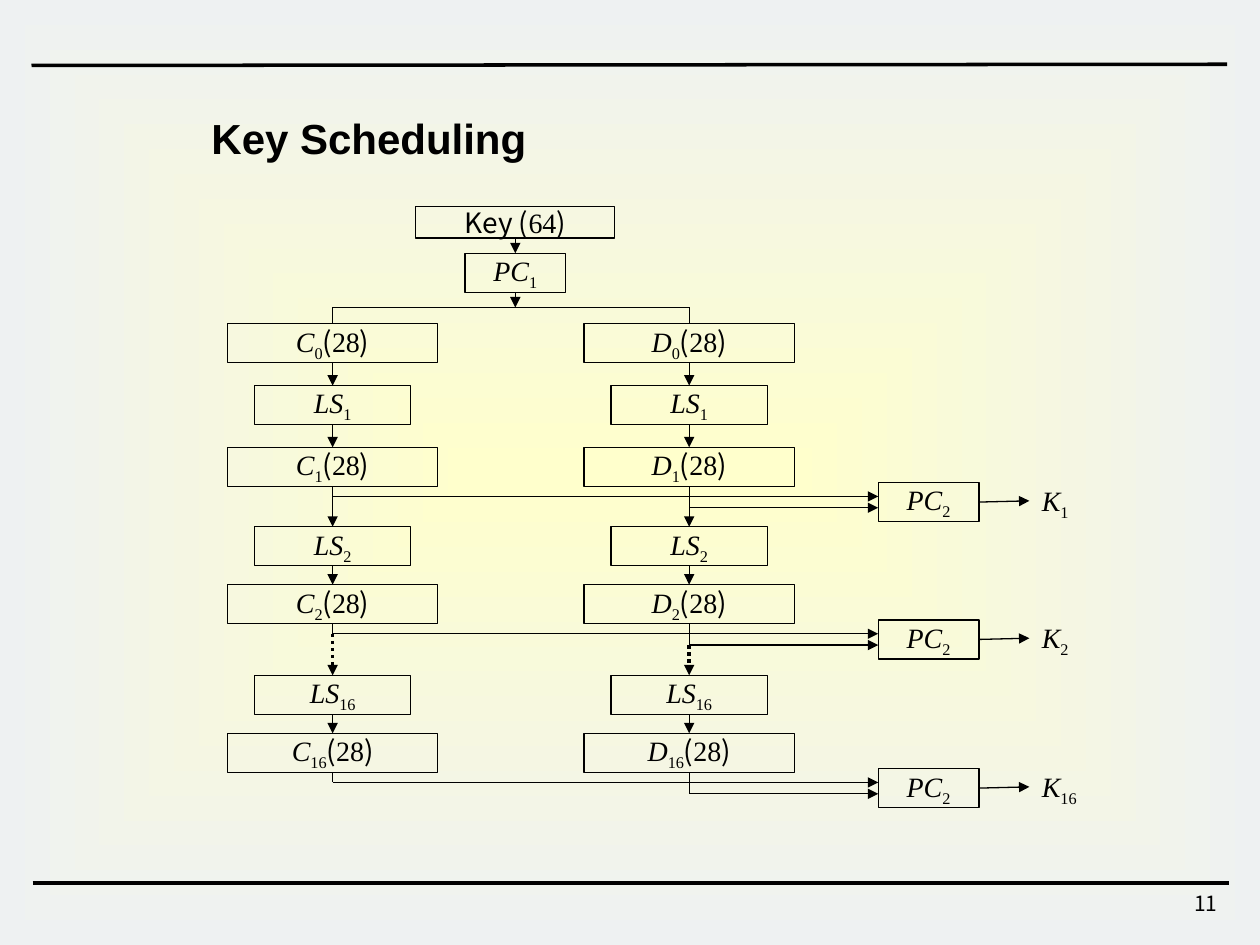
from lxml.etree import SubElement
from pptx import Presentation
from pptx.dml.color import RGBColor
from pptx.enum.dml import MSO_LINE_DASH_STYLE as Dash
from pptx.enum.shapes import MSO_CONNECTOR as Connector, MSO_SHAPE as Shape
from pptx.enum.text import MSO_ANCHOR as Anchor, PP_ALIGN as Align
from pptx.oxml import parse_xml
from pptx.oxml.ns import nsdecls, qn
from pptx.util import Inches, Pt

THEME = {
    "ink": "000000", "glow": "FFFFCC", "edge": "EEF1F2",
    "title_font": "Arial", "math_font": "Times New Roman", "plain_font": "Noto Sans CJK KR",
    "title_size": 24, "label_size": 16, "number_size": 12,
    "thin": 0.75, "thick": 2,
}

# Content
TITLE = "Key Scheduling"
PAGE_NUMBER = "11"
KEY_LABEL = [("Key (", "plain"), ("64", "math"), (")", "plain")]
BITS = [("(", "plain"), ("28", "math"), (")", "plain")]
HALVES = {"C": 2.64, "D": 5.47}  # name: column centre
START_ROW = 2.57
# subscript, top of shift row, top of half-key row
ROUNDS = [("1", 3.06, 3.55), ("2", 4.18, 4.64), ("16", 5.36, 5.82)]

# Grid, in inches
WIDTH, HEIGHT = 10, 7.5
BOX_HEIGHT = 0.31
HALF_WIDTH, SHIFT_WIDTH, CHOICE_WIDTH, KEY_WIDTH = 1.67, 1.24, 0.8, 1.58
KEY_CENTER, CHOICE_CENTER, OUTPUT_LEFT = 4.09, 7.37, 8.17
KEY_TOP, KEY_HEIGHT, FIRST_CHOICE_TOP, SPLIT_ROW = 1.64, 0.25, 2.01, 2.44
TAP_GAPS = {"C": 0.08, "D": 0.17}  # drop below a half key to its branch
CHOICE_DROP, OUTPUT_RISE = 0.28, 0.04
TOP, LEFT, BOTTOM, RIGHT = range(4)

deck = Presentation()
deck.slide_width, deck.slide_height = Inches(WIDTH), Inches(HEIGHT)
page = deck.slides.add_slide(deck.slide_layouts[6])
INK = RGBColor.from_string(THEME["ink"])


def symbol(name, subscript):
    return [(name, "variable"), (subscript, "subscript")]


def write(frame, runs, size, font, align=Align.LEFT, bold=False):
    """Fill one paragraph with (text, style) runs."""
    para = frame.paragraphs[0]
    para.alignment = align
    para.font.size, para.font.name = Pt(size), font
    para.font.bold, para.font.color.rgb = bold, INK
    for text, style in runs:
        span = para.add_run()
        span.text = text
        if style == "plain":
            span.font.name = THEME["plain_font"]
        elif style == "variable":
            span.font.italic = True
        elif style == "subscript":
            span._r.get_or_add_rPr().set("baseline", "-25000")


def add_text(left, top, width, height, runs, size, font, wrap=True, **style):
    box = page.shapes.add_textbox(*map(Inches, (left, top, width, height)))
    box.text_frame.word_wrap = wrap
    write(box.text_frame, runs, size, font, **style)
    return box


def add_box(center, top, width, runs, height=BOX_HEIGHT):
    box = page.shapes.add_shape(
        Shape.RECTANGLE, *map(Inches, (center - width / 2, top, width, height)))
    box.shadow.inherit = False
    box.fill.background()
    box.line.color.rgb, box.line.width = INK, Pt(THEME["thin"])
    box.text_frame.word_wrap = False
    box.text_frame.vertical_anchor = Anchor.MIDDLE
    write(box.text_frame, runs, THEME["label_size"], THEME["math_font"], Align.CENTER)
    return box


def add_line(start, end, arrow=False, weight="thin", dotted=False):
    """Draw between two ends, each an (x, y) point or a (shape, side) joint."""
    points = [(0, 0) if hasattr(spot[0], "shape_id") else spot for spot in (start, end)]
    line = page.shapes.add_connector(
        Connector.STRAIGHT, *(Inches(value) for point in points for value in point))
    for spot, join in ((start, line.begin_connect), (end, line.end_connect)):
        if hasattr(spot[0], "shape_id"):
            join(*spot)
    line.line.color.rgb, line.line.width = INK, Pt(THEME[weight])
    if dotted:
        line.line.dash_style = Dash.ROUND_DOT
    if arrow:
        SubElement(line.line._get_or_add_ln(), qn("a:tailEnd"), type="triangle")
    SubElement(line._element.spPr, qn("a:effectLst"))


def add_backdrop():
    backdrop = page.shapes.add_shape(Shape.RECTANGLE, 0, 0, deck.slide_width, deck.slide_height)
    backdrop.shadow.inherit = False
    backdrop.line.fill.background()
    stops = "".join(
        f'<a:gs pos="{place}"><a:srgbClr val="{THEME[name]}"/></a:gs>'
        for place, name in ((0, "glow"), (100000, "edge")))
    gradient = parse_xml(
        f'<a:gradFill {nsdecls("a")} rotWithShape="0"><a:gsLst>{stops}</a:gsLst>'
        '<a:path path="shape"><a:fillToRect l="50000" t="50000" r="50000" b="50000"/>'
        '</a:path></a:gradFill>')
    backdrop._element.spPr.find(qn("a:prstGeom")).addnext(gradient)


def add_frame():
    add_backdrop()
    add_line((0.25, 0.52), (9.74, 0.51), weight="thick")
    add_line((0.26, 7.01), (9.75, 7.01), weight="thick")
    add_text(7.68, 7.02, 2.08, 0.33, [(PAGE_NUMBER, "plain")],
             THEME["number_size"], THEME["plain_font"], align=Align.RIGHT)
    add_text(1.58, 0.84, 2.7, 0.5, [(TITLE, "title")],
             THEME["title_size"], THEME["title_font"], wrap=False, bold=True)


def add_key_split():
    key = add_box(KEY_CENTER, KEY_TOP, KEY_WIDTH, KEY_LABEL, KEY_HEIGHT)
    choice = add_box(KEY_CENTER, FIRST_CHOICE_TOP, CHOICE_WIDTH, symbol("PC", "1"))
    add_line((key, BOTTOM), (choice, TOP), arrow=True)
    add_line((choice, BOTTOM), (KEY_CENTER, SPLIT_ROW), arrow=True)
    add_line((HALVES["C"], SPLIT_ROW), (HALVES["D"], SPLIT_ROW))


def add_half(name, center):
    """Draw one column: the half key, its shifts and the branches to PC2."""
    half = add_box(center, START_ROW, HALF_WIDTH, symbol(name, "0") + BITS)
    add_line((center, SPLIT_ROW), (half, TOP))
    branch = None
    for number, shift_top, half_top in ROUNDS:
        shift = add_box(center, shift_top, SHIFT_WIDTH, symbol("LS", number))
        if number == ROUNDS[-1][0]:
            add_line((half, BOTTOM), branch)
            add_line(branch, (shift, TOP), arrow=True, weight="thick", dotted=True)
        else:
            add_line((half, BOTTOM), (shift, TOP), arrow=True)
        half = add_box(center, half_top, HALF_WIDTH, symbol(name, number) + BITS)
        add_line((shift, BOTTOM), (half, TOP), arrow=True)
        branch = (center, half_top + BOX_HEIGHT + TAP_GAPS[name])
        add_line(branch, (CHOICE_CENTER - CHOICE_WIDTH / 2, branch[1]), arrow=True)
    add_line((half, BOTTOM), branch)


def add_round_keys():
    for number, _, half_top in ROUNDS:
        top = half_top + CHOICE_DROP
        choice = add_box(CHOICE_CENTER, top, CHOICE_WIDTH, symbol("PC", "2"))
        output = add_text(OUTPUT_LEFT, top - OUTPUT_RISE, 0.58, 0.37, symbol("K", number),
                          THEME["label_size"], THEME["math_font"])
        add_line((choice, RIGHT), (output, LEFT), arrow=True)


add_frame()
add_key_split()
for half_name, column in HALVES.items():
    add_half(half_name, column)
add_round_keys()
deck.save("out.pptx")
